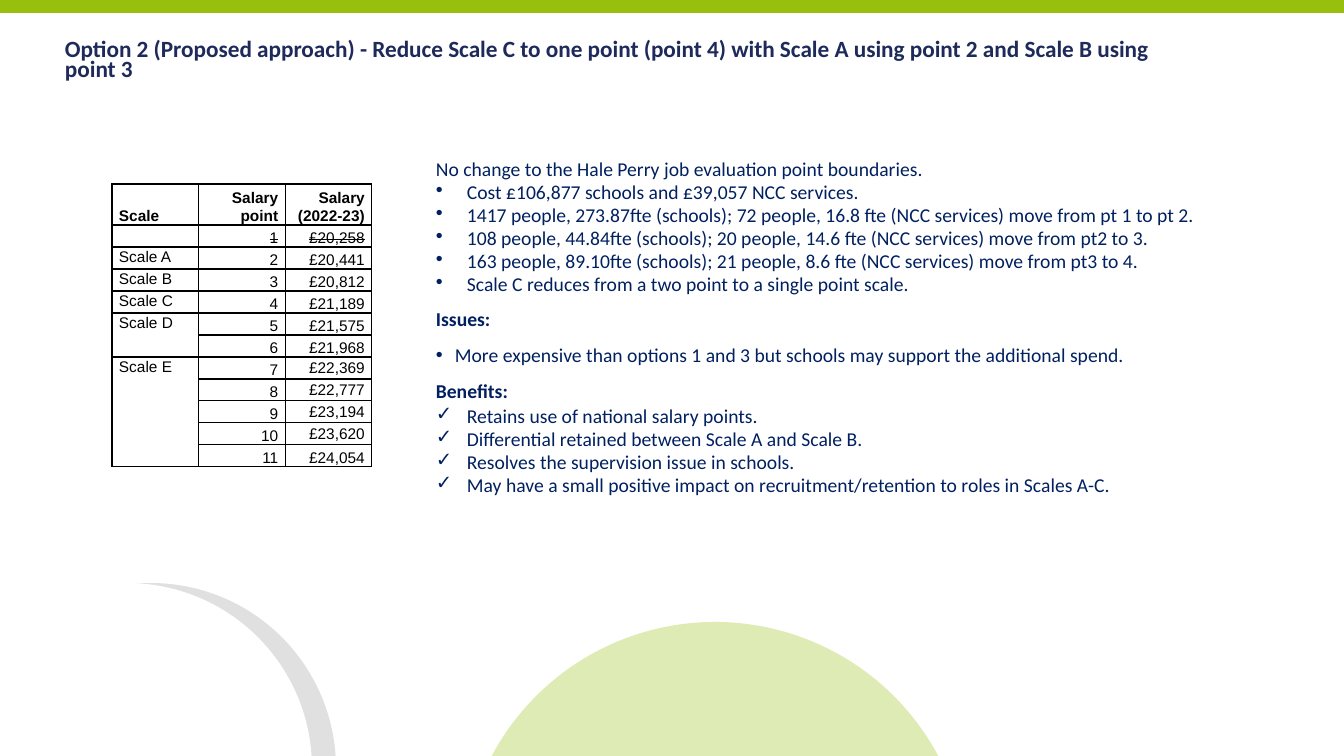
from dataclasses import dataclass
from lxml.etree import SubElement as Sub
from pptx import Presentation
from pptx.dml.color import RGBColor as Rgb
from pptx.enum.shapes import MSO_SHAPE as Shape
from pptx.enum.text import MSO_ANCHOR as Anchor, MSO_AUTO_SIZE as Auto, PP_ALIGN as Align
from pptx.oxml.ns import qn
from pptx.util import Pt

SCALE = 914400 / 100.8


@dataclass(frozen=True)
class Theme:
    bar: str = "98BF0E"
    green: str = "97BF0D"
    black: str = "000000"
    white: str = "FFFFFF"
    title: str = "1D2A5A"
    body: str = "002060"
    sans: str = "Calibri"
    grid: str = "Arial"
    title_pt: float = 16.6
    body_pt: int = 14
    grid_pt: int = 11
    after_pt: int = 8


THEME = Theme()
TIGHT, LOOSE = 0.5, 1.07

# text, bullet, indent in px, line spacing, bold
NOTES = [
    ("No change to the Hale Perry job evaluation point boundaries.", "", 0, TIGHT, False),
    ("Cost £106,877 schools and £39,057 NCC services.", "•", 31, TIGHT, False),
    ("1417 people, 273.87fte (schools); 72 people, 16.8 fte (NCC services) move from pt 1 to pt 2.",
     "•", 31, TIGHT, False),
    ("108 people, 44.84fte (schools); 20 people, 14.6 fte (NCC services) move from pt2 to 3.",
     "•", 31, TIGHT, False),
    ("163 people, 89.10fte (schools); 21 people, 8.6 fte (NCC services) move from pt3 to 4.",
     "•", 31, TIGHT, False),
    ("Scale C reduces from a two point to a single point scale.", "•", 31, TIGHT, False),
    ("Issues:", "", 0, LOOSE, True),
    ("More expensive than options 1 and 3 but schools may support the additional spend.",
     "•", 19, LOOSE, False),
    ("Benefits:", "", 0, LOOSE, True),
    ("Retains use of national salary points.", "✓", 31, TIGHT, False),
    ("Differential retained between Scale A and Scale B.", "✓", 31, TIGHT, False),
    ("Resolves the supervision issue in schools.", "✓", 31, TIGHT, False),
    ("May have a small positive impact on recruitment/retention to roles in Scales A-C.",
     "✓", 31, TIGHT, False),
]

HEADS = ["Scale", "Salary point", "Salary (2022-23)"]
BANDS = [("", ["£20,258"]), ("Scale A", ["£20,441"]), ("Scale B", ["£20,812"]),
         ("Scale C", ["£21,189"]), ("Scale D", ["£21,575", "£21,968"]),
         ("Scale E", ["£22,369", "£22,777", "£23,194", "£23,620", "£24,054"])]
MIDDLE = range(7, 11)


def px(n):
    return round(n * SCALE)


def place(*box):
    return [px(n) for n in box]


def add_run(para, text, font, size, color, bold=False):
    run = para.add_run()
    run.text = text
    run.font.name, run.font.size, run.font.bold = font, Pt(size), bold
    run.font.color.rgb = Rgb.from_string(color)
    return run


def add_bullet(para, mark, indent):
    props = para._p.get_or_add_pPr()
    props.set("marL", str(px(indent)))
    props.set("indent", str(-px(indent)))
    Sub(props, qn("a:buFont"), typeface=THEME.grid)
    Sub(props, qn("a:buChar"), char=mark)


def add_form(slide, kind, box, color, alpha=100):
    form = slide.shapes.add_shape(kind, *place(*box))
    form.shadow.inherit = False
    form.line.fill.background()
    form.fill.solid()
    form.fill.fore_color.rgb = Rgb.from_string(color)
    if alpha < 100:
        tint = form._element.spPr.find(".//" + qn("a:srgbClr"))
        Sub(tint, qn("a:alpha"), val=str(alpha * 1000))


def add_decor(slide, width, height):
    """Draw the grey crescent, the green dome and the top bar."""
    ring = 370
    top = height - 173
    add_form(slide, Shape.OVAL, (-34, top, ring, ring), THEME.black, 12)
    add_form(slide, Shape.OVAL, (-58, top, ring, ring), THEME.white)
    add_form(slide, Shape.OVAL, (462, height - 134, 506, 506), THEME.green, 30)
    add_form(slide, Shape.RECTANGLE, (0, 0, width, 13), THEME.bar)


def add_frame(slide, box):
    frame = slide.shapes.add_textbox(*place(*box)).text_frame
    frame.word_wrap = True
    return frame


def add_title(slide, box):
    para = add_frame(slide, box).paragraphs[0]
    para.line_spacing = 0.7
    add_run(para, "Option 2 (Proposed approach) - Reduce Scale C to one point (point 4) "
            "with Scale A using point 2 and Scale B using point 3",
            THEME.sans, THEME.title_pt, THEME.title, True)


def add_notes(slide, box):
    frame = add_frame(slide, box)
    frame.auto_size = Auto.SHAPE_TO_FIT_TEXT
    for i, (text, mark, indent, space, bold) in enumerate(NOTES):
        para = frame.add_paragraph() if i else frame.paragraphs[0]
        para.line_spacing = space
        para.space_after = Pt(THEME.after_pt)
        if mark:
            add_bullet(para, mark, indent)
        add_run(para, text, THEME.sans, THEME.body_pt, THEME.body, bold)


def add_edges(cell):
    props = cell._tc.get_or_add_tcPr()
    for side in "LRTB":
        line = Sub(props, qn("a:ln" + side), w=str(Pt(1)))
        Sub(Sub(line, qn("a:solidFill")), qn("a:srgbClr"), val=THEME.black)


def fill_cell(cell, text, row, col):
    add_edges(cell)
    cell.fill.background()
    cell.margin_left = cell.margin_right = px(7)
    cell.margin_top = cell.margin_bottom = 0
    if col == 2 and row in MIDDLE:
        cell.vertical_anchor = Anchor.MIDDLE
    else:
        cell.vertical_anchor = Anchor.BOTTOM if col or not row else Anchor.TOP
    para = cell.text_frame.paragraphs[0]
    para.alignment = Align.RIGHT if col else Align.LEFT
    para.line_spacing = LOOSE
    para.space_after = Pt(THEME.after_pt)
    if text:
        run = add_run(para, text, THEME.grid, THEME.grid_pt, THEME.black, row == 0)
        if row == 1:
            run._r.get_or_add_rPr().set("strike", "sngStrike")
    else:
        Sub(para._p, qn("a:endParaRPr"), sz=str(THEME.grid_pt * 100))


def add_scales(slide, box):
    """Draw the salary table, with one merged label per scale."""
    rows = [HEADS]
    spans = []
    for name, sums in BANDS:
        spans.append((len(rows), len(sums)))
        for i, pay in enumerate(sums):
            rows.append(["" if i else name, str(len(rows)), pay])
    table = slide.shapes.add_table(len(rows), len(HEADS), *place(*box)).table
    table.first_row = table.horz_banding = False
    for col in table.columns:
        col.width = px(box[2] / len(HEADS))
    for r, row in enumerate(rows):
        table.rows[r].height = px(22 if r else box[3] - 22 * (len(rows) - 1))
        for c, text in enumerate(row):
            fill_cell(table.cell(r, c), text, r, c)
    for first, count in spans:
        if count > 1:
            table.cell(first, 0).merge(table.cell(first + count - 1, 0))


def main():
    width, height = 1344, 756
    deck = Presentation()
    deck.slide_width, deck.slide_height = place(width, height)
    slide = deck.slides.add_slide(deck.slide_layouts[6])
    add_decor(slide, width, height)
    add_title(slide, (55, 37, 1137, 51))
    add_notes(slide, (426, 162, 806, 343))
    add_scales(slide, (112, 184, 260, 283))
    deck.save("out.pptx")


if __name__ == "__main__":
    main()
